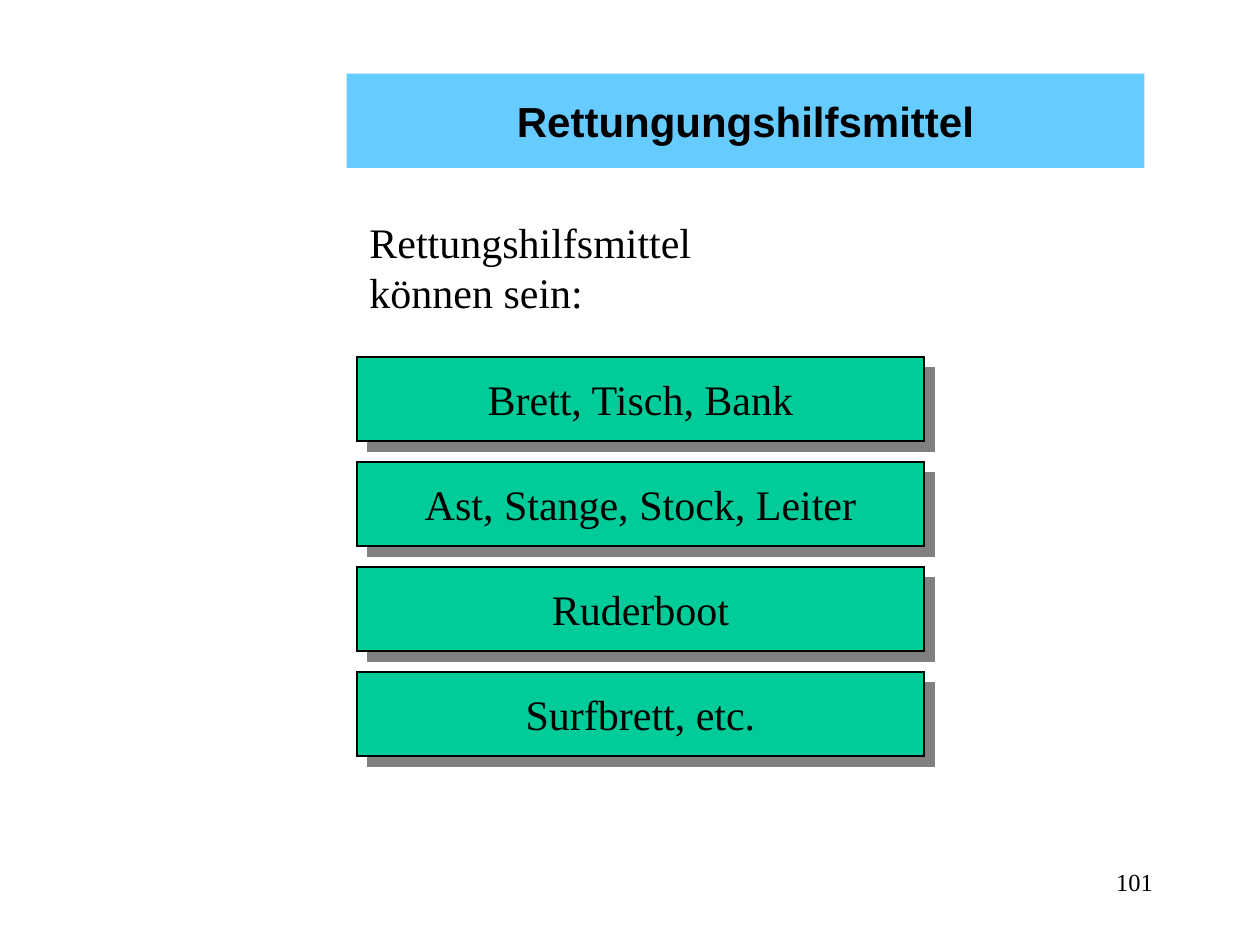
from dataclasses import dataclass

from lxml import etree
from pptx import Presentation
from pptx.dml.color import RGBColor
from pptx.enum.shapes import MSO_SHAPE
from pptx.enum.text import MSO_ANCHOR, MSO_AUTO_SIZE, PP_ALIGN
from pptx.oxml.ns import qn
from pptx.util import Pt

RECT = MSO_SHAPE.RECTANGLE
TOP, MIDDLE = MSO_ANCHOR.TOP, MSO_ANCHOR.MIDDLE
LEFT, CENTER, RIGHT = PP_ALIGN.LEFT, PP_ALIGN.CENTER, PP_ALIGN.RIGHT
FIXED, GROW = MSO_AUTO_SIZE.NONE, MSO_AUTO_SIZE.SHAPE_TO_FIT_TEXT
TITLE_ONLY = 5

SERIF, SANS = "Times New Roman", "Arial"
BLACK, BLUE, GREEN, GRAY = "000000", "66CCFF", "00CC99", "808080"


@dataclass
class Box:
    left: float
    top: float
    width: float
    height: float

    def place(self) -> tuple:
        return Pt(self.left), Pt(self.top), Pt(self.width), Pt(self.height)

    def trim(self, gap: float) -> "Box":
        """Return the box with the gap taken off above and below."""
        return Box(self.left, self.top + gap, self.width,
                   self.height - 2 * gap)


@dataclass
class Aid:
    text: str
    box: Box


AID_TEXTS = ["Brett, Tisch, Bank", "Ast, Stange, Stock, Leiter",
             "Ruderboot", "Surfbrett, etc."]
AID_TOP, AID_STEP = 204, 60
AIDS = [Aid(text, Box(204, AID_TOP + row * AID_STEP, 324, 48))
        for row, text in enumerate(AID_TEXTS)]


def color(code: str) -> RGBColor:
    return RGBColor.from_string(code)


def write(shape, text: str, *, size: float = 24, font: str = SERIF,
          bold: bool = False, align=LEFT, anchor=TOP, fit=FIXED) -> None:
    frame = shape.text_frame
    frame.text = text
    frame.word_wrap = True
    frame.auto_size = fit
    frame.vertical_anchor = anchor
    para = frame.paragraphs[0]
    para.alignment = align
    face = para.runs[0].font
    face.name, face.size, face.bold = font, Pt(size), bold
    face.color.rgb = color(BLACK)


def paint(shape, code: str) -> None:
    shape.fill.solid()
    shape.fill.fore_color.rgb = color(code)


def edge(shape) -> None:
    """Give the shape a thin black outline with sharp corners."""
    shape.line.color.rgb = color(BLACK)
    shape.line.width = Pt(0.75)
    line = shape.element.spPr.find(qn("a:ln"))
    etree.SubElement(line, qn("a:miter"), lim="800000")


def cast(shape) -> None:
    """Give the shape a hard gray shadow to the lower right."""
    shape.shadow.inherit = False
    effects = shape.element.spPr.find(qn("a:effectLst"))
    shade = etree.SubElement(effects, qn("a:outerShdw"), blurRad="0",
                             dist=str(Pt(8.5)), dir=str(45 * 60000),
                             algn="ctr", rotWithShape="0")
    etree.SubElement(shade, qn("a:srgbClr"), val=GRAY)


def draw_title(slide, text: str, box: Box) -> None:
    title = slide.shapes.title
    title.left, title.top, title.width, title.height = box.place()
    paint(title, BLUE)
    write(title, text, font=SANS, bold=True, align=CENTER, anchor=MIDDLE)


def draw_note(slide, text: str, box: Box, **style) -> None:
    write(slide.shapes.add_textbox(*box.place()), text, **style)


def draw_aid(slide, aid: Aid) -> None:
    shape = slide.shapes.add_shape(RECT, *aid.box.place())
    paint(shape, GREEN)
    edge(shape)
    cast(shape)
    draw_note(slide, aid.text, aid.box.trim(6), align=CENTER, fit=GROW)


def main() -> None:
    deck = Presentation()
    deck.slide_width, deck.slide_height = Pt(720), Pt(540)
    slide = deck.slides.add_slide(deck.slide_layouts[TITLE_ONLY])
    draw_title(slide, "Rettungungshilfsmittel", Box(198, 42, 456, 54))
    draw_note(slide, "Rettungshilfsmittel können sein:",
              Box(204, 120, 228, 65), fit=GROW)
    for aid in AIDS:
        draw_aid(slide, aid)
    draw_note(slide, "101", Box(516, 492, 150, 36), size=14, align=RIGHT)
    deck.save("out.pptx")


if __name__ == "__main__":
    main()
